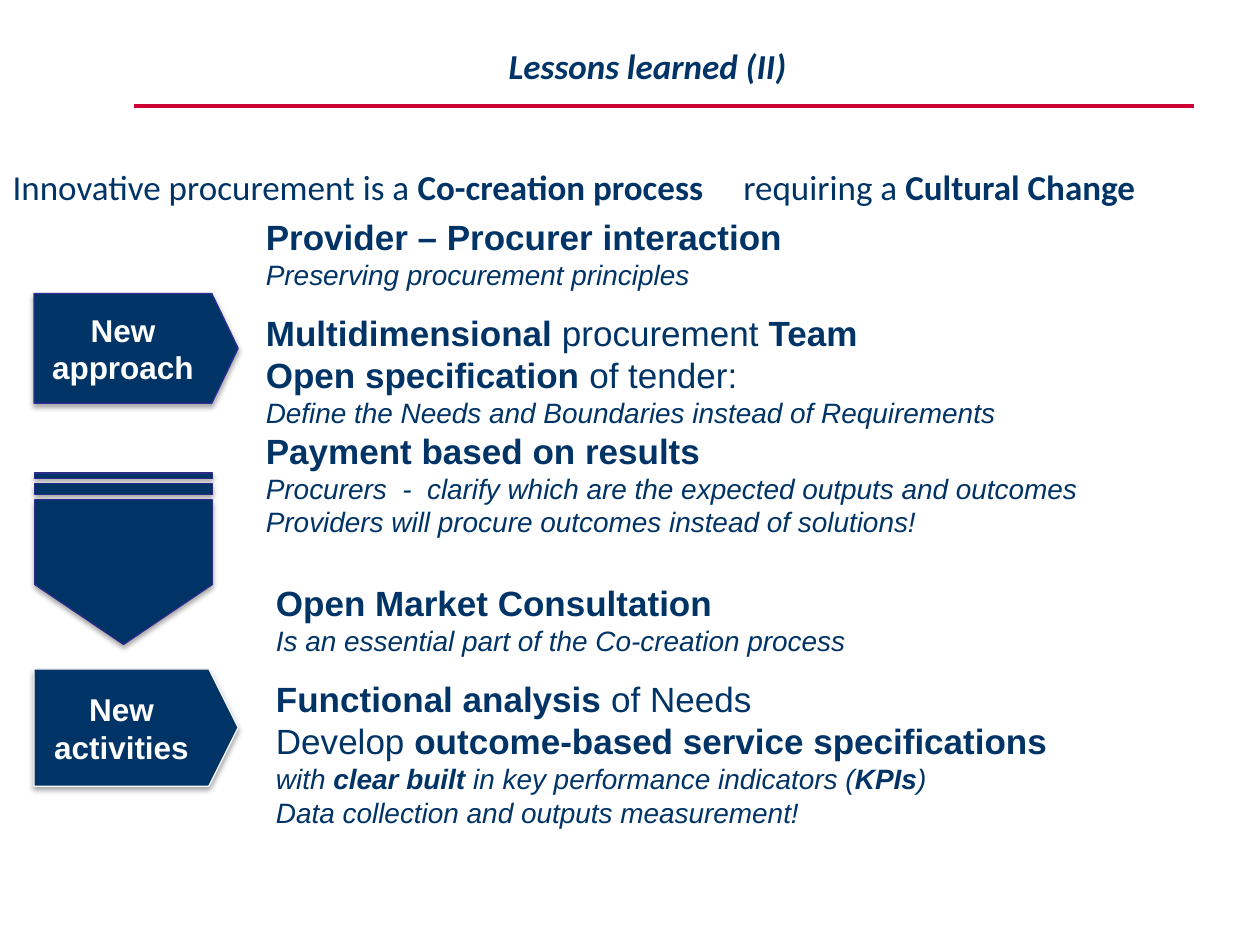
from lxml import etree
from pptx import Presentation
from pptx.dml.color import RGBColor
from pptx.enum.shapes import MSO_CONNECTOR, MSO_SHAPE
from pptx.enum.text import MSO_ANCHOR, MSO_AUTO_SIZE, PP_ALIGN
from pptx.oxml.ns import qn
from pptx.util import Inches, Pt

ARROW = MSO_SHAPE.RIGHT_ARROW
STRIPED = MSO_SHAPE.STRIPED_RIGHT_ARROW
STRAIGHT = MSO_CONNECTOR.STRAIGHT
MIDDLE = MSO_ANCHOR.MIDDLE
NO_FIT = MSO_AUTO_SIZE.NONE
LEFT = PP_ALIGN.LEFT
CENTER = PP_ALIGN.CENTER

WIDTH, HEIGHT = Inches(10), Inches(7.5)
COLS, ROWS = 100, 75
NAVY, WHITE, RED = "003366", "FFFFFF", "CC0033"
HEAD, NOTE = 20, 16

APPROACH = [
    (HEAD, 1, [("Provider – Procurer interaction", True)]),
    (NOTE, 1, [("Preserving procurement principles", False)]),
    (HEAD, 1.5, [("Multidimensional", True), (" procurement ", False), ("Team", True)]),
    (HEAD, 1, [("Open specification ", True), ("of tender:", False)]),
    (NOTE, 1, [("Define the Needs and Boundaries instead of Requirements", False)]),
    (HEAD, 1, [("Payment based on results", True)]),
    (NOTE, 1, [("Procurers  -  clarify which are the expected outputs and outcomes", False)]),
    (NOTE, 1, [("Providers will procure outcomes instead of solutions!", False)]),
]
ACTIONS = [
    (HEAD, 1, [("Open Market Consultation", True)]),
    (NOTE, 1, [("Is an essential part of the Co-creation process", False)]),
    (HEAD, 1.5, [("Functional analysis ", True), ("of Needs", False)]),
    (HEAD, 1, [("Develop ", False), ("outcome-based service specifications", True)]),
    (NOTE, 1, [("with ", False), ("clear built ", True),
               ("in key performance indicators (", False), ("KPIs", True), (")", False)]),
    (NOTE, 1, [("Data collection and outputs measurement!", False)]),
]
CLAIM = [("Innovative procurement is a ", False), ("Co-creation process", True),
         ("\trequiring a", False), (" Cultural Change", True)]


def color(code):
    return RGBColor.from_string(code)


def grid(left, top, wide, high):
    return (round(WIDTH * left / COLS), round(HEIGHT * top / ROWS),
            round(WIDTH * wide / COLS), round(HEIGHT * high / ROWS))


def place(shape, area):
    shape.left, shape.top, shape.width, shape.height = grid(*area)
    frame = shape.text_frame
    frame.auto_size = NO_FIT
    frame.word_wrap = True
    frame.vertical_anchor = MIDDLE
    return frame


def add_run(para, text, size, face, tint=NAVY, bold=True, slant=False):
    run = para.add_run()
    run.text = text
    font = run.font
    font.size, font.name = Pt(size), face
    font.bold, font.italic = bold, slant
    font.color.rgb = color(tint)


def add_claim(shape, area, runs, stop):
    para = place(shape, area).paragraphs[0]
    para.alignment = LEFT
    tabs = etree.SubElement(para._p.get_or_add_pPr(), qn("a:tabLst"))
    etree.SubElement(tabs, qn("a:tab"), pos=str(grid(stop, 0, 0, 0)[0]), algn="l")
    for text, bold in runs:
        add_run(para, text, HEAD, "Calibri", bold=bold)


def add_list(shape, area, lines):
    frame = place(shape, area)
    for count, (size, space, runs) in enumerate(lines):
        para = frame.add_paragraph() if count else frame.paragraphs[0]
        props = para._p.get_or_add_pPr()
        props.set("marL", "0")
        props.set("indent", "0")
        etree.SubElement(props, qn("a:buNone"))
        para.alignment = LEFT
        para.space_before = Pt(0)
        para.line_spacing = space
        for text, bold in runs:
            add_run(para, text, size, "Arial", bold=bold, slant=size == NOTE)


def add_shade(shape):
    shape.shadow.inherit = False
    effects = shape._element.spPr.find(qn("a:effectLst"))
    shade = etree.SubElement(effects, qn("a:outerShdw"), blurRad=str(Pt(3.1)),
                             dist=str(Pt(1.8)), dir="5400000", rotWithShape="0")
    tint = etree.SubElement(shade, qn("a:srgbClr"), val="000000")
    etree.SubElement(tint, qn("a:alpha"), val="35000")


def add_arrow(slide, kind, area, tip, edge, text="", turn=0):
    shape = slide.shapes.add_shape(kind, *grid(*area))
    shape.adjustments[0], shape.adjustments[1] = 1, tip
    shape.rotation = turn
    shape.fill.solid()
    shape.fill.fore_color.rgb = color(NAVY)
    shape.line.color.rgb = color(edge)
    shape.line.width = Pt(0.75)
    add_shade(shape)
    if text:
        para = place(shape, area).paragraphs[0]
        para.alignment = CENTER
        add_run(para, text, 18, "Arial", WHITE)


def add_label(slide, area, text):
    frame = place(slide.shapes.add_textbox(*grid(*area)), area)
    para = frame.paragraphs[0]
    para.alignment = CENTER
    add_run(para, text, HEAD, "Calibri", slant=True)


def add_rule(slide, left, right, row):
    start, top, span, _ = grid(left, row, right - left, 0)
    rule = slide.shapes.add_connector(STRAIGHT, start, top, start + span, top)
    rule.line.color.rgb = color(RED)
    rule.line.width = Pt(2.25)
    etree.SubElement(rule._element.spPr, qn("a:effectLst"))


def main():
    deck = Presentation()
    deck.slide_width, deck.slide_height = WIDTH, HEIGHT
    slide = deck.slides.add_slide(deck.slide_layouts[3])
    title, upper, lower = list(slide.placeholders)[:3]
    for spare in list(slide.placeholders)[3:]:
        spare._element.getparent().remove(spare._element)
    add_claim(title, (0, 12.1, 100, 5.4), CLAIM, 58)
    add_list(upper, (20.1, 16.2, 70.9, 27.4), APPROACH)
    add_list(lower, (20.9, 43.8, 70.1, 24.3), ACTIONS)
    add_arrow(slide, ARROW, (2.7, 53.1, 16.2, 9.3), 0.25, "F9F9F9", "New activities")
    add_arrow(slide, STRIPED, (3, 37.3, 13.6, 14.1), 0.35, "2A2A89", turn=90)
    add_arrow(slide, ARROW, (2.7, 23.3, 16.2, 8.7), 0.24, "2F2F98", "New approach")
    add_label(slide, (2.8, 3, 99.1 - 1.9, 4.4), "Lessons learned (II)")
    add_rule(slide, 10.6, 94.8, 8.4)
    deck.save("out.pptx")


if __name__ == "__main__":
    main()
